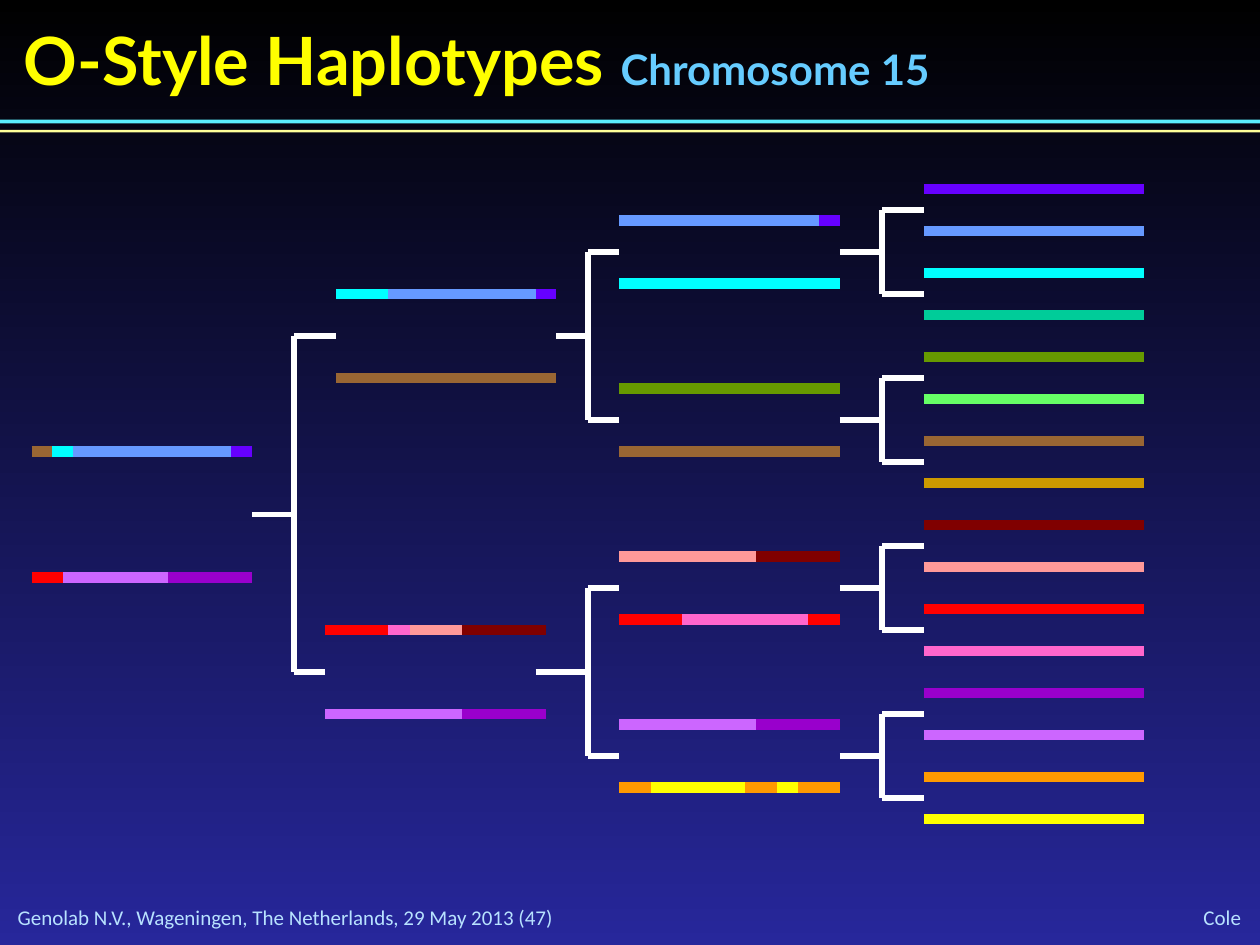
from dataclasses import dataclass

from pptx import Presentation
from pptx.dml.color import RGBColor
from pptx.enum import shapes, text
from pptx.oxml import ns, xmlchemy
from pptx.util import Inches, Pt


@dataclass(frozen=True)
class Theme:
    top: str = "000000"
    bottom: str = "27279B"
    title: str = "FFFF00"
    subtitle: str = "66CCFF"
    footer: str = "B8E2FF"
    rule_blue: str = "5BEFFF"
    rule_yellow: str = "FFFF99"
    bracket: str = "FFFFFF"
    heading_font: str = "Lato"
    body_font: str = "Calibri"
    title_size: int = 38
    subtitle_size: int = 24
    footer_size: int = 12
    strip_width: int = 6
    bracket_width: int = 3


THEME = Theme()

# Haplotype colours, in the order of the sixteen oldest strips
HAPLOTYPES = {
    "violet": "6600FF", "blue": "6699FF", "cyan": "00FFFF", "teal": "00CC99",
    "olive": "669900", "lime": "66FF66", "brown": "996633", "ochre": "CC9900",
    "maroon": "800000", "salmon": "FF9999", "red": "FF0000", "pink": "FF66CC",
    "purple": "9900CC", "orchid": "CC66FF", "orange": "FF9900", "yellow": "FFFF00",
}

# The pedigree lies on a grid of twelfths of an inch
UNITS_PER_INCH = 12
STRIP_LENGTH = 21

# Strips: left, top, then (haplotype, length) segments
STRIPS = [
    # Animal
    (3, 43, [("brown", 2), ("cyan", 2), ("blue", 15), ("violet", 2)]),
    (3, 55, [("red", 3), ("orchid", 10), ("purple", 8)]),
    # Parents
    (32, 28, [("cyan", 5), ("blue", 14), ("violet", 2)]),
    (32, 36, [("brown", STRIP_LENGTH)]),
    (31, 60, [("red", 6), ("pink", 2), ("salmon", 5), ("maroon", 8)]),
    (31, 68, [("orchid", 13), ("purple", 8)]),
    # Grandparents
    (59, 21, [("blue", 19), ("violet", 2)]),
    (59, 27, [("cyan", STRIP_LENGTH)]),
    (59, 37, [("olive", STRIP_LENGTH)]),
    (59, 43, [("brown", STRIP_LENGTH)]),
    (59, 53, [("salmon", 13), ("maroon", 8)]),
    (59, 59, [("red", 6), ("pink", 12), ("red", 3)]),
    (59, 69, [("orchid", 13), ("purple", 8)]),
    (59, 75, [("orange", 3), ("yellow", 9), ("orange", 3), ("yellow", 2),
              ("orange", 4)]),
]


def color(value):
    return RGBColor.from_string(value)


def grid(units):
    return Inches(units / UNITS_PER_INCH)


def paint_background(page):
    fill = page.background.fill
    fill.gradient()
    fill.gradient_angle = 270
    for stop, value, position in zip(
            fill.gradient_stops, (THEME.top, THEME.bottom), (0, 1)):
        stop.color.rgb = color(value)
        stop.position = position


def prepare_frame(frame, anchor):
    frame.margin_left = frame.margin_right = 0
    frame.margin_top = frame.margin_bottom = 0
    frame.word_wrap = True
    frame.auto_size = text.MSO_AUTO_SIZE.NONE
    frame.vertical_anchor = anchor


def fill_title(page, title, subtitle):
    box = page.shapes.title
    box.left, box.top = Inches(0.19), Inches(0.15)
    box.width, box.height = Inches(9), Inches(0.64)
    prepare_frame(box.text_frame, text.MSO_ANCHOR.TOP)
    para = box.text_frame.paragraphs[0]
    para.alignment = text.PP_ALIGN.LEFT
    para.font.name = THEME.heading_font
    para.font.bold = True
    for words, size, value in (
            (title, THEME.title_size, THEME.title),
            (subtitle, THEME.subtitle_size, THEME.subtitle)):
        span = para.add_run()
        span.text = words
        span.font.size = Pt(size)
        span.font.color.rgb = color(value)


def add_rule(page, top, height, value):
    rule = page.shapes.add_shape(
        shapes.MSO_SHAPE.RECTANGLE, 0, Inches(top), Inches(10), Inches(height))
    rule.shadow.inherit = False
    rule.fill.solid()
    rule.fill.fore_color.rgb = color(value)
    rule.line.fill.background()


def add_footer(page, words, left, top, width, height, alignment):
    box = page.shapes.add_textbox(
        Inches(left), Inches(top), Inches(width), Inches(height))
    prepare_frame(box.text_frame, text.MSO_ANCHOR.MIDDLE)
    para = box.text_frame.paragraphs[0]
    para.text = words
    para.alignment = alignment
    para.font.name = THEME.body_font
    para.font.size = Pt(THEME.footer_size)
    para.font.color.rgb = color(THEME.footer)


def add_line(page, start, end, value, width):
    line = page.shapes.add_connector(
        shapes.MSO_CONNECTOR.STRAIGHT, *map(grid, start + end))
    line.line.color.rgb = color(value)
    line.line.width = Pt(width)
    properties = line._element.spPr
    properties.append(xmlchemy.OxmlElement("a:effectLst"))


def add_strip(page, left, top, segments):
    for haplotype, length in segments:
        add_line(page, (left, top), (left + length, top),
                 HAPLOTYPES[haplotype], THEME.strip_width)
        left += length


def add_bracket(page, stem, spine, branches, middle, upper, lower):
    """Join a stem on the left to an upper and a lower branch on the right."""
    upper_end, lower_end = branches
    for start, end in (
            ((stem, middle), (spine, middle)),
            ((spine, upper), (spine, lower)),
            ((spine, upper), (upper_end, upper)),
            ((spine, lower), (lower_end, lower))):
        add_line(page, start, end, THEME.bracket, THEME.bracket_width)


def main():
    deck = Presentation()
    deck.slide_width, deck.slide_height = Inches(10), Inches(7.5)
    page = deck.slides.add_slide(deck.slide_layouts[5])
    paint_background(page)

    # Header and footer
    add_rule(page, 0.95, 0.03, THEME.rule_blue)
    add_rule(page, 1.03, 0.02, THEME.rule_yellow)
    fill_title(page, "O-Style Haplotypes ", "Chromosome 15")
    add_footer(page, "Genolab N.V., Wageningen, The Netherlands, 29 May 2013 (47)",
               0.14, 7.18, 5.78, 0.2, text.PP_ALIGN.LEFT)
    add_footer(page, "Cole", 8.72, 7.17, 1.13, 0.21, text.PP_ALIGN.RIGHT)

    # Brackets between the generations
    add_bracket(page, 24, 28, (32, 31), 49, 32, 64)
    for stem, middle in ((53, 32), (51, 64)):
        add_bracket(page, stem, 56, (59, 59), middle, middle - 8, middle + 8)
    for middle in range(24, 73, 16):
        add_bracket(page, 80, 84, (88, 88), middle, middle - 4, middle + 4)

    # Haplotype strips, the oldest generation in one even column
    for row, haplotype in enumerate(HAPLOTYPES):
        add_strip(page, 88, 18 + 4 * row, [(haplotype, STRIP_LENGTH)])
    for left, top, segments in STRIPS:
        add_strip(page, left, top, segments)

    deck.save("out.pptx")


if __name__ == "__main__":
    main()
